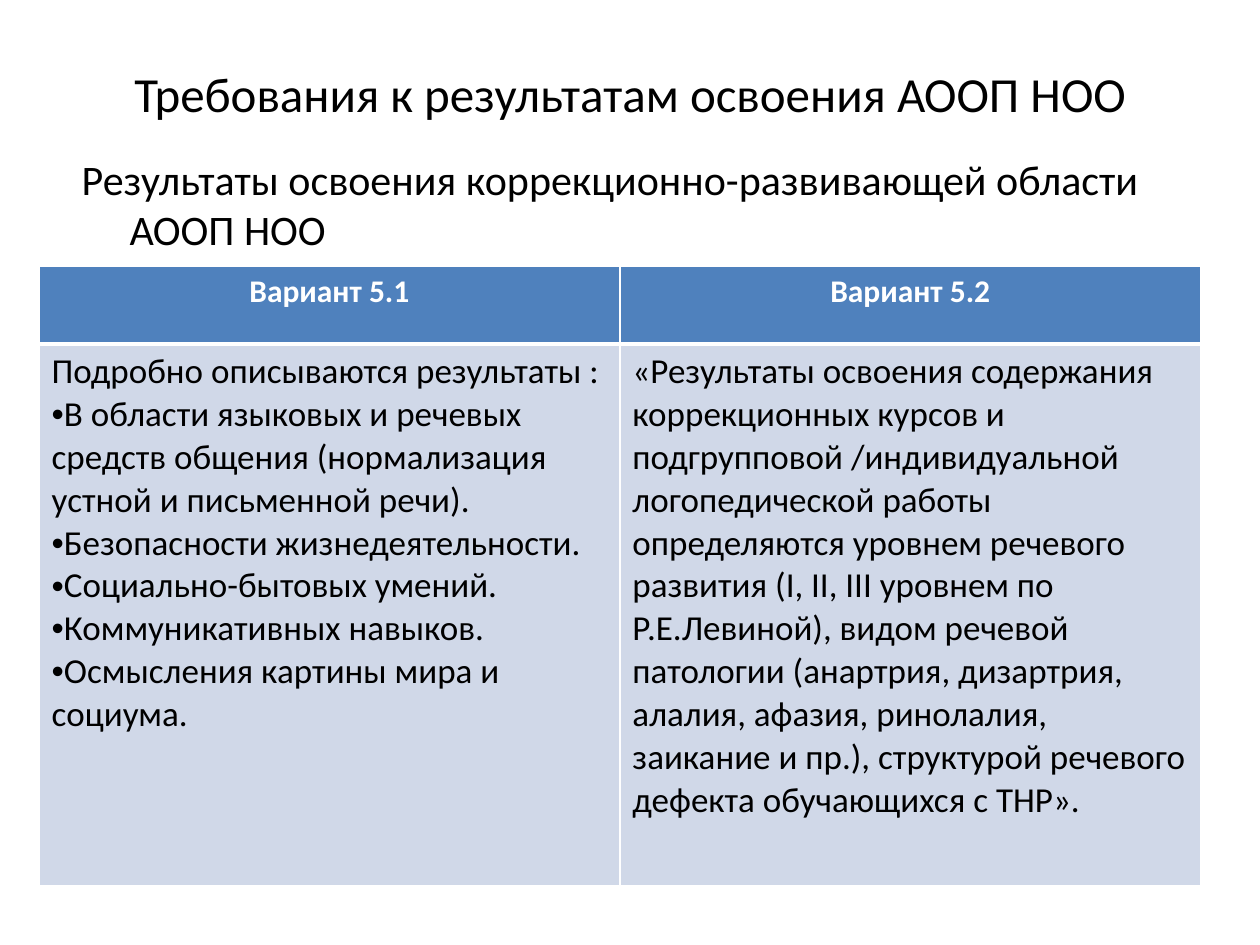
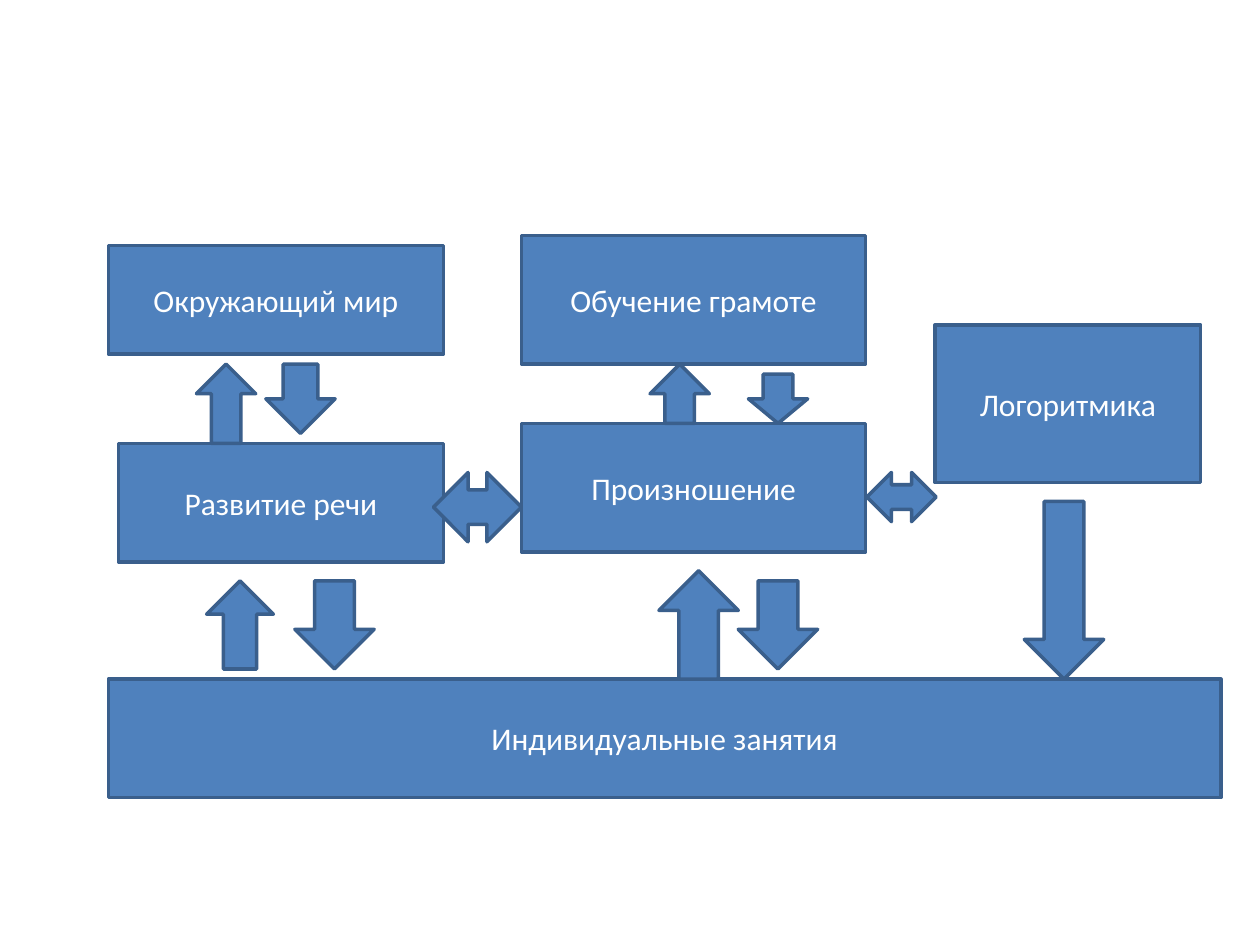
from dataclasses import dataclass

from lxml import etree
from pptx import Presentation
from pptx.dml.color import RGBColor
from pptx.enum.shapes import MSO_SHAPE
from pptx.enum.text import MSO_ANCHOR, PP_ALIGN
from pptx.oxml.ns import qn
from pptx.util import Inches, Pt

LEFT, CENTER = PP_ALIGN.LEFT, PP_ALIGN.CENTER
TOP, MIDDLE = MSO_ANCHOR.TOP, MSO_ANCHOR.MIDDLE
RECT = MSO_SHAPE.RECTANGLE
UP, DOWN, BOTH = MSO_SHAPE.UP_ARROW, MSO_SHAPE.DOWN_ARROW, MSO_SHAPE.LEFT_RIGHT_ARROW


@dataclass(frozen=True)
class Theme:
    font: str = "Calibri"
    accent: str = "4F81BD"
    outline: str = "3A5F8C"
    pale: str = "D0D8E8"
    dark: str = "000000"
    light: str = "FFFFFF"
    title: int = 28
    subtitle: int = 24
    body: int = 20
    label: int = 18
    line: int = 2
    border: int = 1
    heavy_border: int = 3


THEME = Theme()

VARIANTS = {
    "Вариант 5.1": [
        ("Подробно описываются результаты :", False),
        ("В области языковых и речевых средств общения (нормализация устной и письменной речи).", True),
        ("Безопасности жизнедеятельности.", True),
        ("Социально-бытовых умений.", True),
        ("Коммуникативных навыков.", True),
        ("Осмысления картины мира и социума.", True),
    ],
    "Вариант 5.2": [
        ("«Результаты освоения содержания коррекционных курсов и подгрупповой /индивидуальной "
         "логопедической работы определяются уровнем речевого развития (I, II, III уровнем по "
         "Р.Е.Левиной), видом речевой патологии (анартрия, дизартрия, алалия, афазия, ринолалия, "
         "заикание и пр.), структурой речевого дефекта обучающихся с ТНР».", False),
    ],
}

SUBJECTS = [
    ("Окружающий мир", 0, 0.08, 2.66, 0.86),
    ("Развитие речи", 0.08, 1.65, 2.58, 0.94),
    ("Индивидуальные занятия", 0, 3.52, 8.83, 0.94),
    ("Обучение грамоте", 3.28, 0, 2.73, 1.02),
    ("Произношение", 3.28, 1.49, 2.73, 1.02),
    ("Логоритмика", 6.56, 0.71, 2.11, 1.25),
]

ARROWS = [
    (DOWN, 1.25, 1.02, 0.55, 0.55),
    (DOWN, 1.48, 2.74, 0.63, 0.7),
    (UP, 0.7, 1.02, 0.47, 0.63),
    (UP, 0.78, 2.74, 0.53, 0.7),
    (DOWN, 5.08, 1.1, 0.47, 0.39),
    (DOWN, 5, 2.74, 0.63, 0.7),
    (UP, 4.3, 1.02, 0.47, 0.47),
    (DOWN, 7.27, 2.11, 0.63, 1.41),
    (UP, 4.37, 2.66, 0.63, 0.86),
    (BOTH, 2.58, 1.88, 0.7, 0.55),
    (BOTH, 6.02, 1.88, 0.55, 0.39),
]


def rgb(color):
    return RGBColor.from_string(color)


def write(tf, text, *, size, color=THEME.dark, bold=False, align=LEFT,
          anchor=None, hanging=0, bullet=False):
    tf.word_wrap = True
    if anchor is not None:
        tf.vertical_anchor = anchor
    p = tf.paragraphs[0] if not tf.text else tf.add_paragraph()
    p.alignment = align
    r = p.add_run()
    r.text = text
    r.font.name = THEME.font
    r.font.size = Pt(size)
    r.font.bold = bold
    r.font.color.rgb = rgb(color)
    pPr = p._p.get_or_add_pPr()
    pPr.set("marL", str(Inches(hanging)))
    pPr.set("indent", str(-Inches(hanging)))
    if bullet:
        etree.SubElement(pPr, qn("a:buFont")).set("typeface", "Arial")
        etree.SubElement(pPr, qn("a:buChar")).set("char", "•")


def add_text(slide, box, text, **style):
    tb = slide.shapes.add_textbox(*map(Inches, box))
    write(tb.text_frame, text, **style)


def add_block(slide, kind, box):
    sp = slide.shapes.add_shape(kind, *map(Inches, box))
    sp.shadow.inherit = False
    sp.fill.solid()
    sp.fill.fore_color.rgb = rgb(THEME.accent)
    sp.line.color.rgb = rgb(THEME.outline)
    sp.line.width = Pt(THEME.line)
    return sp


def style_cell(cell, fill, **heavy):
    tcPr = cell._tc.get_or_add_tcPr()
    for side in ("L", "R", "T", "B"):
        width = heavy.get(side, THEME.border)
        ln = etree.SubElement(tcPr, qn(f"a:ln{side}"), w=str(Pt(width)))
        paint = etree.SubElement(ln, qn("a:solidFill"))
        etree.SubElement(paint, qn("a:srgbClr"), val=THEME.light)
    cell.fill.solid()
    cell.fill.fore_color.rgb = rgb(fill)


def variants_table(slide, box, header_height):
    left, top, width, height = map(Inches, box)
    table = slide.shapes.add_table(2, len(VARIANTS), left, top, width, height).table
    table.rows[0].height = Inches(header_height)
    table.rows[1].height = height - Inches(header_height)
    for col, (name, results) in enumerate(VARIANTS.items()):
        table.columns[col].width = width // len(VARIANTS)
        head, body = table.cell(0, col), table.cell(1, col)
        style_cell(head, THEME.accent, B=THEME.heavy_border)
        style_cell(body, THEME.pale, T=THEME.heavy_border)
        write(head.text_frame, name, size=THEME.label, color=THEME.light, bold=True, align=CENTER)
        for text, bullet in results:
            write(body.text_frame, text, size=THEME.body, bullet=bullet)


def subjects_diagram(slide, box):
    left, top = box[:2]
    for name, x, y, w, h in SUBJECTS:
        sp = add_block(slide, RECT, (left + x, top + y, w, h))
        write(sp.text_frame, name, size=THEME.label, color=THEME.light, align=CENTER, anchor=MIDDLE)
    for kind, x, y, w, h in ARROWS:
        add_block(slide, kind, (left + x, top + y, w, h))


def requirements_slide(slide):
    add_text(slide, (0.5, 0.3, 9, 0.87), "Требования к результатам освоения АООП НОО",
             size=THEME.title, align=CENTER, anchor=MIDDLE)
    add_text(slide, (0.55, 1.17, 8.95, 0.94),
             "Результаты освоения коррекционно-развивающей области АООП НОО",
             size=THEME.subtitle, anchor=TOP, hanging=0.38)
    variants_table(slide, (0.31, 2.11, 9.22, 4.92), 0.62)


def subjects_slide(slide):
    subjects_diagram(slide, (0.86, 1.87, 8.83, 4.46))


def main():
    prs = Presentation()
    prs.slide_width, prs.slide_height = Inches(10), Inches(7.5)
    for build in (requirements_slide, subjects_slide):
        build(prs.slides.add_slide(prs.slide_layouts[6]))
    prs.save("out.pptx")


if __name__ == "__main__":
    main()
